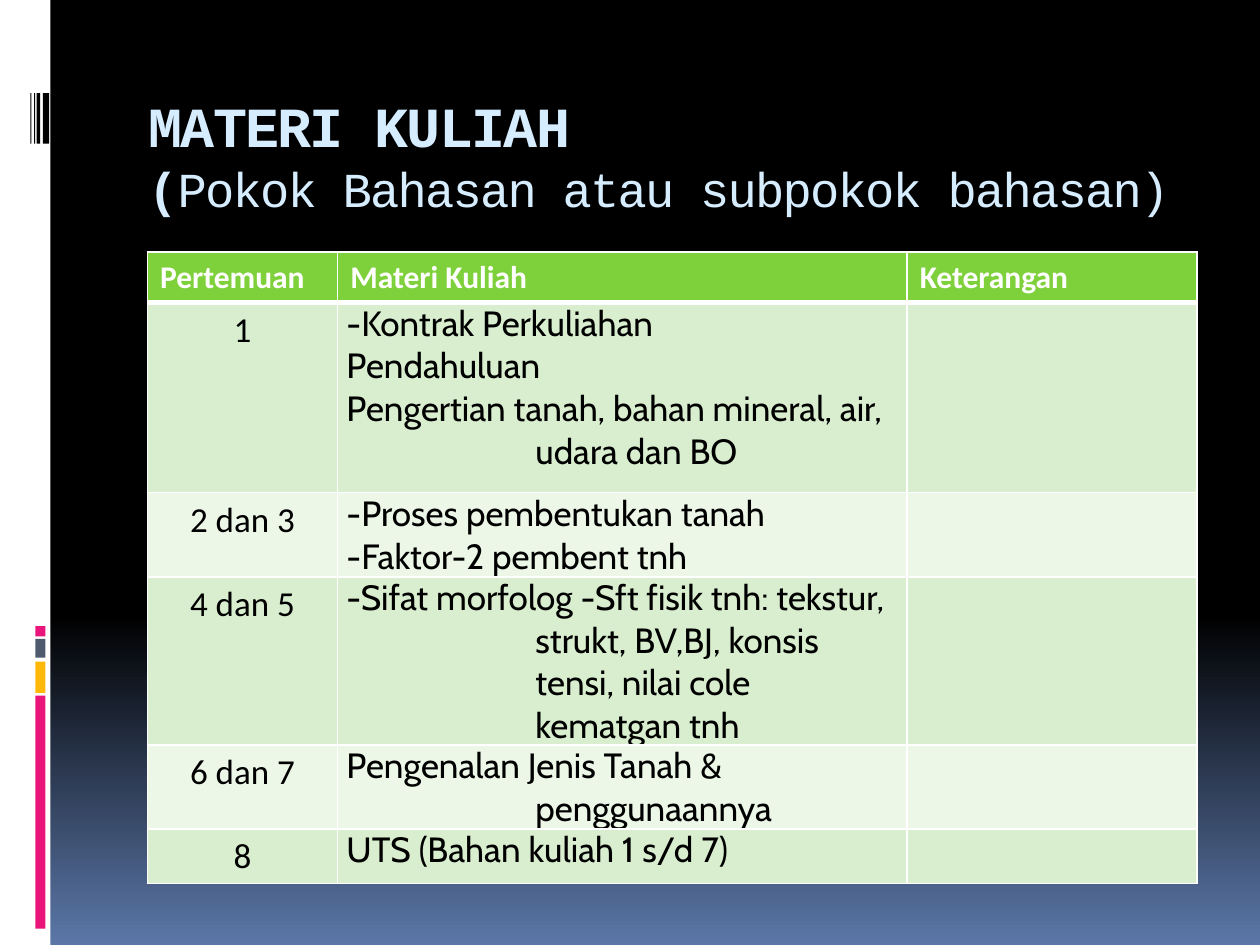
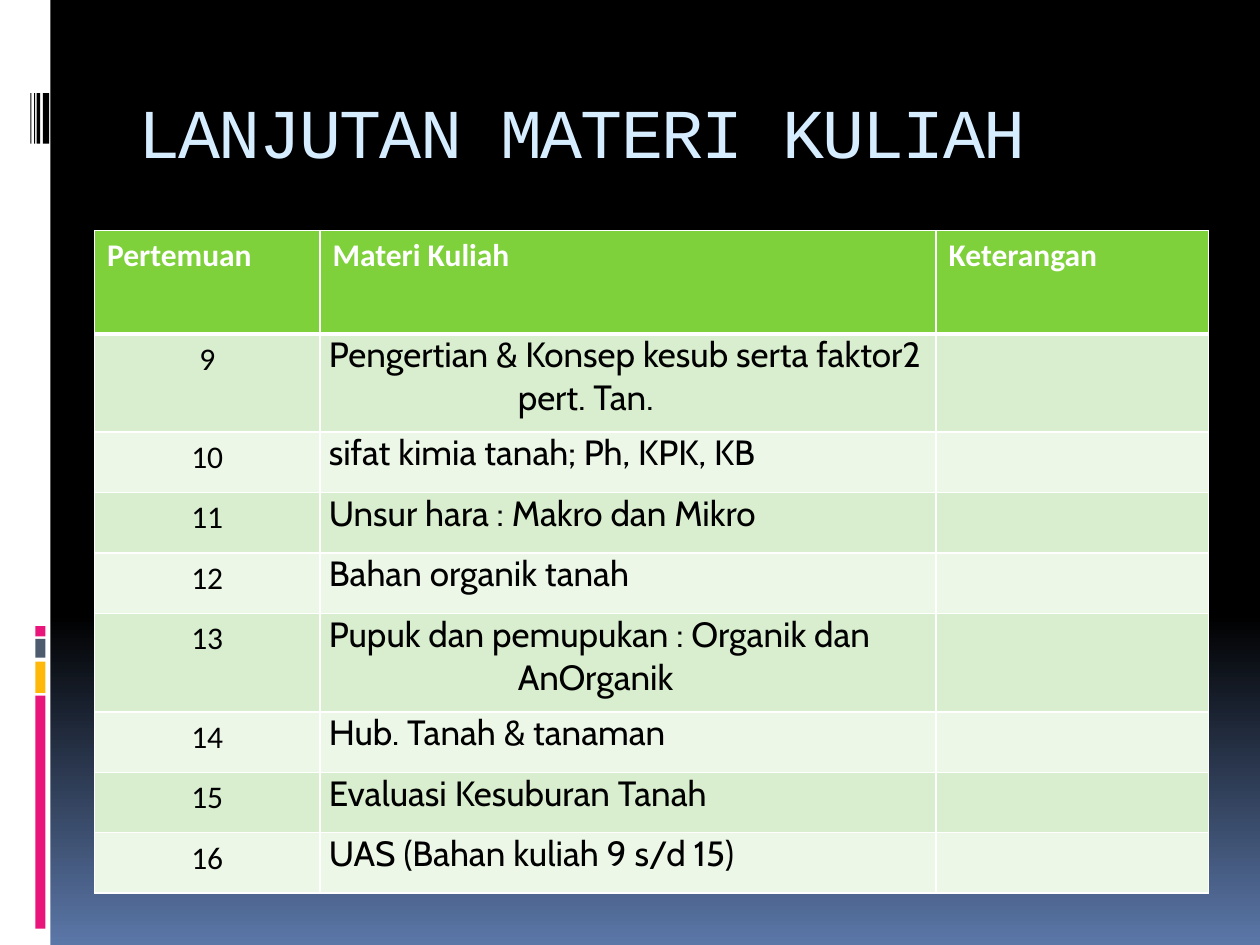
from dataclasses import dataclass

from lxml.etree import SubElement
from pptx import Presentation
from pptx.dml.color import RGBColor
from pptx.enum.shapes import MSO_SHAPE
from pptx.enum.text import PP_ALIGN
from pptx.oxml.ns import qn
from pptx.util import Inches, Pt

BLACK, WHITE = "000000", "FFFFFF"
DUSK, TITLE_BLUE = "5B77A8", "D6ECFF"
PINK, AMBER, SLATE = "EA157A", "FEB80A", "4E5B6F"
HEADER_GREEN = "7FD13B"
ROW_GREENS = ("D8EECE", "ECF7E8")
TITLE_FONT, NUMBER_FONT, TOPIC_FONT = "Courier New", "Calibri", "Cabin"
HEADINGS = ("Pertemuan", "Materi Kuliah", "Keterangan")


@dataclass(frozen=True)
class Band:
    left: float
    top: float
    width: float
    height: float
    color: str


@dataclass(frozen=True)
class TitleSpan:
    text: str
    size: float
    bold: bool = False
    new_line: bool = False


@dataclass(frozen=True)
class Meeting:
    number: str
    topics: tuple[str, ...]
    height: float
    indent: float = 1.5


@dataclass(frozen=True)
class Schedule:
    title_place: tuple[float, float]
    title: tuple[TitleSpan, ...]
    table_place: tuple[float, float]
    columns: tuple[float, ...]
    header_height: float
    number_size: float
    meetings: tuple[Meeting, ...]


BANDS = (
    Band(0, 0, 0.4, 7.5, WHITE),
    *(Band(0.28, top, 0.08, height, color) for top, height, color in (
        (5.52, 1.85, PINK), (5.25, 0.25, AMBER), (5.07, 0.15, SLATE), (4.97, 0.08, PINK))),
    *(Band(left, 0.74, width, 0.4, BLACK) for left, width in (
        (0.34, 0.05), (0.29, 0.03), (0.27, 0.01), (0.24, 0.01))),
)

SCHEDULES = (
    Schedule(
        (1.08, 0.58),
        (TitleSpan("MATERI KULIAH", 32.4, bold=True),
         TitleSpan("(", 27.9, bold=True, new_line=True),
         TitleSpan("Pokok Bahasan atau subpokok bahasan)", 27.9)),
        (1.17, 2), (1.51, 4.52, 2.3), 0.37, 20,
        (Meeting("1", ("-Kontrak Perkuliahan", "Pendahuluan",
                       "Pengertian tanah, bahan mineral, air, udara dan BO"), 1.51),
         Meeting("2 dan 3", ("-Proses pembentukan tanah", "-Faktor-2 pembent tnh"), 0.6, 0.01),
         Meeting("4 dan 5", ("-Sifat morfolog -Sft fisik tnh: tekstur, strukt, BV,BJ, "
                             "konsis tensi, nilai cole kematgan tnh",), 1.2),
         Meeting("6 dan 7", ("Pengenalan Jenis Tanah & penggunaannya",), 0.6),
         Meeting("8", ("UTS (Bahan kuliah 1 s/d 7)",), 0.39)),
    ),
    Schedule(
        (1, 0.56), (TitleSpan("LANJUTAN MATERI KULIAH", 40),),
        (0.75, 1.83), (1.79, 4.89, 2.16), 0.82, 18,
        (Meeting("9", ("Pengertian & Konsep kesub serta faktor2 pert. Tan.",), 0.78),
         Meeting("10", ("sifat kimia tanah; Ph, KPK, KB",), 0.48),
         Meeting("11", ("Unsur hara : Makro dan Mikro",), 0.48),
         Meeting("12", ("Bahan organik tanah",), 0.48),
         Meeting("13", ("Pupuk dan pemupukan : Organik dan AnOrganik",), 0.78),
         Meeting("14", ("Hub. Tanah & tanaman",), 0.48),
         Meeting("15", ("Evaluasi Kesuburan Tanah",), 0.48),
         Meeting("16", ("UAS (Bahan kuliah 9 s/d 15)",), 0.48)),
    ),
)


def rgb(color: str) -> RGBColor:
    return RGBColor.from_string(color)


def style_font(font, name: str, size: float, color: str, bold: bool = False) -> None:
    font.name, font.size, font.bold = name, Pt(size), bold
    font.color.rgb = rgb(color)


def paint_background(master) -> None:
    fill = master.background.fill
    fill.gradient()
    fill.gradient_angle = 270
    for stop, position, color in zip(fill.gradient_stops, (0.65, 1), (BLACK, DUSK)):
        stop.position = position
        stop.color.rgb = rgb(color)


def draw_band(page, band: Band) -> None:
    shape = page.shapes.add_shape(MSO_SHAPE.RECTANGLE, Inches(band.left), Inches(band.top),
                                  Inches(band.width), Inches(band.height))
    shape.shadow.inherit = False
    shape.fill.solid()
    shape.fill.fore_color.rgb = rgb(band.color)
    shape.line.fill.background()


def draw_title(page, schedule: Schedule) -> None:
    left, top = schedule.title_place
    box = page.shapes.add_textbox(Inches(left), Inches(top), Inches(8.5), Inches(1))
    box.text_frame.word_wrap = True
    box.text_frame.margin_top = Inches(0.14)
    para = box.text_frame.paragraphs[0]
    for part in schedule.title:
        if part.new_line:
            para.add_line_break()
        span = para.add_run()
        span.text = part.text
        style_font(span.font, TITLE_FONT, part.size, TITLE_BLUE, part.bold)
        span.font._element.set("spc", "-100")


def dress_cell(cell, row: int, color: str) -> None:
    properties = cell._tc.get_or_add_tcPr()
    for side in ("lnL", "lnR", "lnT", "lnB"):
        under_header = (side, row) in (("lnB", 0), ("lnT", 1))
        line = SubElement(properties, qn(f"a:{side}"), w=str(Pt(3 if under_header else 1)))
        SubElement(SubElement(line, qn("a:solidFill")), qn("a:srgbClr"), val=WHITE)
    cell.fill.solid()
    cell.fill.fore_color.rgb = rgb(color)


def write_topics(cell, meeting: Meeting) -> None:
    cell.margin_left = cell.margin_right = Inches(0.07)
    cell.margin_top = cell.margin_bottom = 0
    cell.text_frame.text = "\n".join(meeting.topics)
    indent = Inches(meeting.indent)
    for para in cell.text_frame.paragraphs:
        properties = para._p.get_or_add_pPr()
        properties.set("marL", str(indent))
        properties.set("indent", str(-indent))
        style_font(para.runs[0].font, TOPIC_FONT, 20, BLACK)


def draw_table(page, schedule: Schedule) -> None:
    heights = (schedule.header_height, *(meeting.height for meeting in schedule.meetings))
    left, top = schedule.table_place
    table = page.shapes.add_table(len(heights), len(HEADINGS), Inches(left), Inches(top),
                                  Inches(sum(schedule.columns)), Inches(sum(heights))).table
    for column, width in zip(table.columns, schedule.columns):
        column.width = Inches(width)
    for index, height in enumerate(heights):
        table.rows[index].height = Inches(height)
        color = ROW_GREENS[(index - 1) % 2] if index else HEADER_GREEN
        for cell in table.rows[index].cells:
            dress_cell(cell, index, color)
    for cell, heading in zip(table.rows[0].cells, HEADINGS):
        cell.text_frame.text = heading
        style_font(cell.text_frame.paragraphs[0].runs[0].font, NUMBER_FONT, 18, WHITE, True)
    for index, meeting in enumerate(schedule.meetings, 1):
        number = table.cell(index, 0)
        number.text_frame.text = meeting.number
        para = number.text_frame.paragraphs[0]
        para.alignment = PP_ALIGN.CENTER
        style_font(para.runs[0].font, NUMBER_FONT, schedule.number_size, BLACK)
        write_topics(table.cell(index, 1), meeting)


def main() -> None:
    deck = Presentation()
    deck.slide_width, deck.slide_height = Inches(10), Inches(7.5)
    paint_background(deck.slide_master)
    for schedule in SCHEDULES:
        page = deck.slides.add_slide(deck.slide_layouts[6])
        for band in BANDS:
            draw_band(page, band)
        draw_title(page, schedule)
        draw_table(page, schedule)
    deck.save("out.pptx")


if __name__ == "__main__":
    main()
